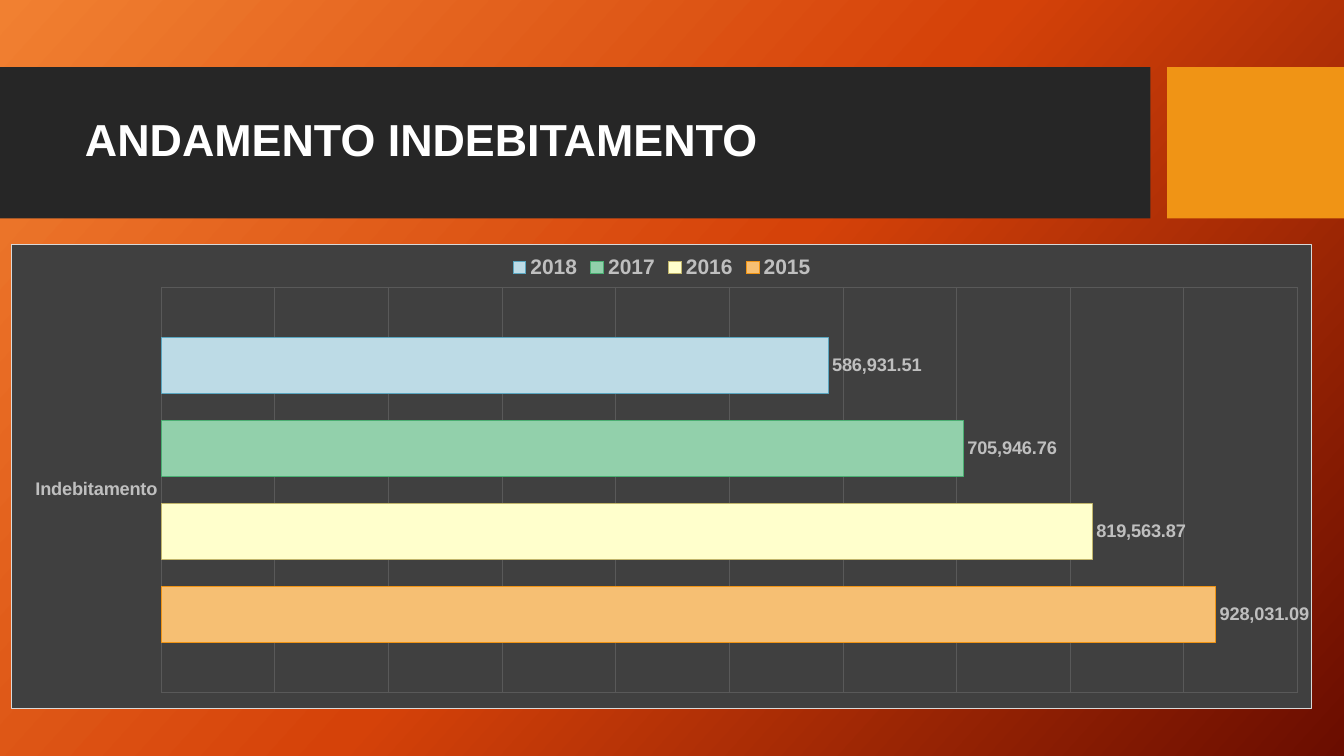
from copy import deepcopy
from pptx import Presentation
from pptx.chart.data import CategoryChartData
from pptx.dml.color import RGBColor
from pptx.enum import chart as ch, shapes, text
from pptx.oxml import parse_xml
from pptx.oxml.ns import nsdecls
from pptx.util import Pt


def rgb(code):
    return RGBColor.from_string(code)


def style(font, size, color):
    font.name = "Arial"
    font.size = Pt(size)
    font.bold = True
    font.color.rgb = rgb(color)


deck = Presentation()
deck.slide_width, deck.slide_height = Pt(960), Pt(540)
slide = deck.slides.add_slide(deck.slide_layouts[6])

back = slide.background.fill
back.gradient()
back.gradient_angle = 318
first = back.gradient_stops[0]._gs
first.addnext(deepcopy(first))
stops = [(0, "F18031"), (0.5, "D54209"), (1, "6A0D00")]
for stop, (place, color) in zip(back.gradient_stops, stops):
    stop.position = place
    stop.color.rgb = rgb(color)

for left, width, color in [(0, 821.8, "262626"), (833.6, 126.4, "F09415")]:
    band = slide.shapes.add_shape(
        shapes.MSO_SHAPE.RECTANGLE, Pt(left), Pt(48), Pt(width), Pt(108))
    band.shadow.inherit = False
    band.fill.solid()
    band.fill.fore_color.rgb = rgb(color)
    band.line.fill.background()

title = slide.shapes.add_textbox(Pt(53.6), Pt(59), Pt(757), Pt(85)).text_frame
title.word_wrap = True
title.vertical_anchor = text.MSO_ANCHOR.MIDDLE
head = title.paragraphs[0]
head.text = "ANDAMENTO INDEBITAMENTO"
head.line_spacing = 0.9
style(head.font, 32, "FFFFFF")

debts = [
    ("2015", 928031.09, "F6BF73", "F09415"),
    ("2016", 819563.87, "FFFFCC", "C1B56B"),
    ("2017", 705946.76, "92D0AB", "4BAF73"),
    ("2018", 586931.51, "BDDBE6", "5AA6C0"),
]
data = CategoryChartData(number_format="#,##0.00")
data.categories = ["Indebitamento"]
for year, value, _, _ in debts:
    data.add_series(year, [value])
chart = slide.shapes.add_chart(
    ch.XL_CHART_TYPE.BAR_CLUSTERED,
    Pt(8), Pt(174.4), Pt(929.5), Pt(331.8), data).chart
chart.has_title = False
chart.font.name = "Karla"
chart.font.size = Pt(10)
chart.font.color.rgb = rgb("FFFFFF")

chart.has_legend = True
chart.legend.position = ch.XL_LEGEND_POSITION.TOP
chart.legend.include_in_layout = False
style(chart.legend.font, 15, "BFBFBF")

names, scale = chart.category_axis, chart.value_axis
for axis in (names, scale):
    axis.has_major_gridlines = True
    grid = axis.major_gridlines.format.line
    grid.color.rgb = rgb("595959")
    grid.width = Pt(0.75)
names.major_tick_mark = ch.XL_TICK_MARK.NONE
names.format.line.fill.background()
style(names.tick_labels.font, 13, "BFBFBF")
scale.visible = False
scale.minimum_scale, scale.maximum_scale = 0, 1000000
scale.major_unit = 100000

plot = chart.plots[0]
plot.gap_width = 182
plot.overlap = -50
plot.vary_by_categories = False
for bars, (_, _, color, edge) in zip(plot.series, debts):
    bars.format.fill.solid()
    bars.format.fill.fore_color.rgb = rgb(color)
    bars.format.line.color.rgb = rgb(edge)
    bars.format.line.width = Pt(0.75)
    labels = bars.data_labels
    labels.show_value = True
    labels.number_format = "#,##0.00"
    labels.number_format_is_linked = False
    labels.position = ch.XL_LABEL_POSITION.OUTSIDE_END
    style(labels.font, 13, "BFBFBF")

root = chart.element
area = root.chart.plotArea
for old in area.xpath("c:layout"):
    area.remove(old)
area.insert(0, parse_xml(
    f'<c:layout {nsdecls("c")}><c:manualLayout><c:layoutTarget val="inner"/>'
    '<c:xMode val="edge"/><c:yMode val="edge"/><c:x val="0.115"/>'
    '<c:y val="0.092"/><c:w val="0.874"/><c:h val="0.875"/>'
    '</c:manualLayout></c:layout>'))
root.chart.addnext(parse_xml(
    f'<c:spPr {nsdecls("c", "a")}>'
    '<a:solidFill><a:srgbClr val="404040"/></a:solidFill>'
    '<a:ln w="9525"><a:solidFill><a:srgbClr val="D9D9D9"/></a:solidFill></a:ln>'
    '</c:spPr>'))

deck.save("out.pptx")
